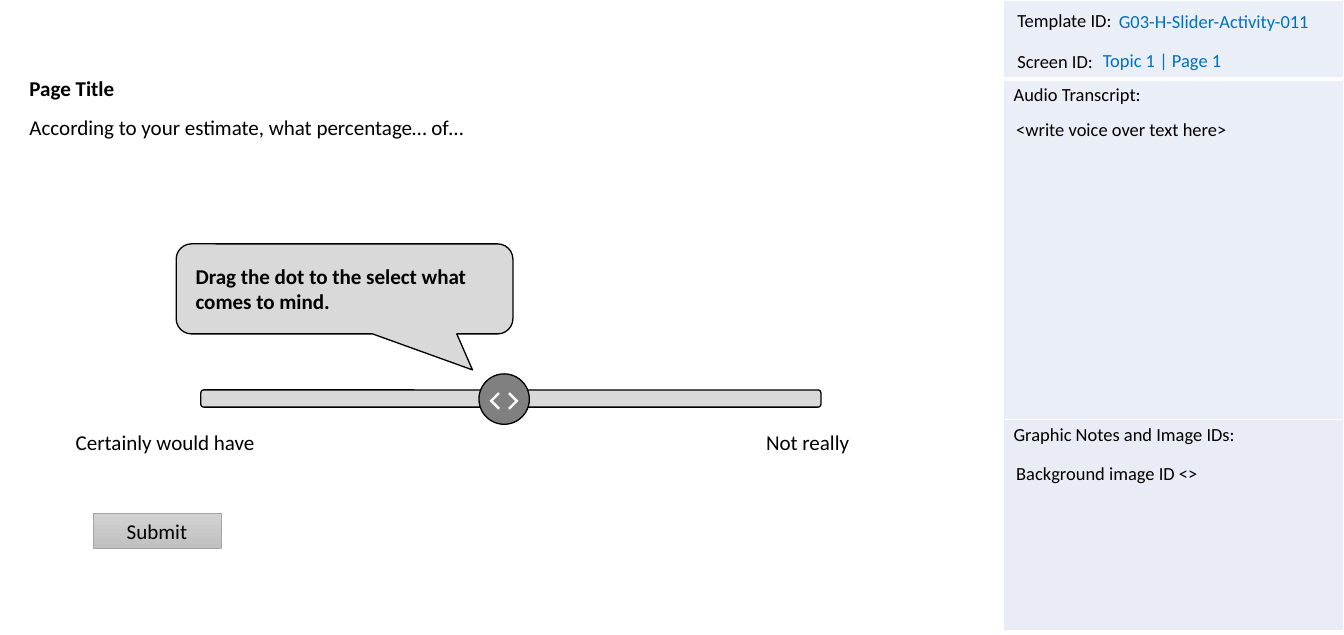
"""Builds a slider activity storyboard slide with a notes panel."""
from dataclasses import dataclass

from lxml import etree
from pptx import Presentation
from pptx import util as u
from pptx.dml.color import RGBColor
from pptx.enum import shapes, text
from pptx.oxml.ns import qn

COLORS = {
    "ink": "000000", "white": "FFFFFF", "link": "0070C0",
    "panel": "EAEFF7", "panel_last": "E9EBF5",
    "light_grey": "D9D9D9", "knob": "808080",
    "button_top": "D2D2D2", "button_bottom": "C0C0C0", "button_edge": "A5A5A5",
}
FONT = "Calibri"
SHAPE = shapes.MSO_SHAPE
SLIDE_SIZE = (36, 17)
PANEL_LEFT, PANEL_WIDTH = 26.87, 9.12
NOTE_INSETS = (0.25, 0.13, 0.25, 0.13)
NO_INSETS = (0, 0, 0, 0)


@dataclass(frozen=True)
class Label:
    wording: str
    left: float
    top: float
    width: float
    height: float = 0.86
    size: int = 14
    color: str = "ink"
    bold: bool = False
    insets: tuple[float, ...] = NOTE_INSETS


@dataclass(frozen=True)
class Figure:
    kind: SHAPE
    left: float
    top: float
    width: float
    height: float
    fill: str
    line: str | None = "ink"
    line_width: float = 1
    rotation: float = 0
    adjustments: tuple[float, ...] = ()


@dataclass(frozen=True)
class PanelRow:
    heading: str
    height: float
    fill: str
    top_border: int
    bottom_border: int


PANEL_ROWS = [
    PanelRow("", 2.11, "panel", 1, 3),
    PanelRow("Audio Transcript:", 9.12, "panel", 3, 1),
    PanelRow("Graphic Notes and Image IDs:", 5.66, "panel_last", 1, 1),
]
LABELS = [
    Label("Screen ID:", 27, 1.22, 4),
    Label("Template ID:", 27, 0.1, 4),
    Label("G03-H-Slider-Activity-011", 29.72, 0.13, 6.27, color="link"),
    Label("Topic 1 | Page 1", 29.29, 1.19, 3.91, color="link"),
    Label("<write voice over text here>", 26.97, 3.02, 9.02),
    Label("Background image ID <>", 26.97, 12.24, 9.02),
    Label("Page Title", 0.79, 2.01, 3.91, 0.97, 16, bold=True, insets=NO_INSETS),
    Label("According to your estimate, what percentage… of…",
          0.79, 3.07, 23.22, 1.4, 16, insets=NO_INSETS),
    Label("Certainly would have", 2.03, 11.51, 5.36, 1.4, 16, insets=NO_INSETS),
    Label("Not really", 20.52, 11.51, 5.36, 1.4, 16, insets=NO_INSETS),
]
CALLOUT = Figure(SHAPE.ROUNDED_RECTANGULAR_CALLOUT, 4.72, 6.53, 9.02, 2.41,
                 "light_grey", adjustments=(0.38, 0.9, 0.17))
BUTTON = Figure(SHAPE.RECTANGLE, 2.49, 13.74, 3.43, 0.94,
                "button_top", "button_edge", 0.5)
SLIDER = [
    Figure(SHAPE.FLOWCHART_ALTERNATE_PROCESS, 5.38, 10.44, 16.61, 0.46, "light_grey"),
    Figure(SHAPE.OVAL, 12.83, 10.01, 1.35, 1.35, "knob"),
    *(Figure(SHAPE.CORNER, left, 10.57, 0.33, 0.33, "white", None,
             rotation=angle, adjustments=(0.2, 0.19))
      for left, angle in ((13.18, 45), (13.49, 225))),
]


def rgb(name: str) -> RGBColor:
    return RGBColor.from_string(COLORS[name])


def write(frame, wording: str, size: int, color: str = "ink", bold: bool = False,
          align=text.PP_ALIGN.LEFT) -> None:
    para = frame.paragraphs[0]
    para.alignment = align
    span = para.add_run()
    span.text = wording
    span.font.name = FONT
    span.font.size = u.Pt(size)
    span.font.bold = bold
    span.font.color.rgb = rgb(color)


def set_insets(holder, insets: tuple[float, ...]) -> None:
    for side, inset in zip(("left", "top", "right", "bottom"), insets):
        setattr(holder, f"margin_{side}", u.Cm(inset))


def set_borders(cell, widths: dict[str, int]) -> None:
    properties = cell._tc.get_or_add_tcPr()
    for side, width in widths.items():
        line = etree.SubElement(properties, qn(f"a:ln{side}"), w=str(int(u.Pt(width))))
        fill = etree.SubElement(line, qn("a:solidFill"))
        etree.SubElement(fill, qn("a:srgbClr"), val=COLORS["white"])


def draw_panel(page) -> None:
    height = sum(row.height for row in PANEL_ROWS)
    table = page.shapes.add_table(len(PANEL_ROWS), 1, u.Cm(PANEL_LEFT), u.Cm(0),
                                  u.Cm(PANEL_WIDTH), u.Cm(height)).table
    table.first_row = table.horz_banding = False
    for index, row in enumerate(PANEL_ROWS):
        table.rows[index].height = u.Cm(row.height)
        cell = table.cell(index, 0)
        set_borders(cell, {"L": 1, "R": 1, "T": row.top_border, "B": row.bottom_border})
        cell.fill.solid()
        cell.fill.fore_color.rgb = rgb(row.fill)
        set_insets(cell, (0.28, 0.13, 0.28, 0.13))
        if row.heading:
            write(cell.text_frame, row.heading, 14)


def draw_label(page, label: Label) -> None:
    box = page.shapes.add_textbox(u.Cm(label.left), u.Cm(label.top),
                                  u.Cm(label.width), u.Cm(label.height))
    box.text_frame.word_wrap = True
    set_insets(box.text_frame, label.insets)
    write(box.text_frame, label.wording, label.size, label.color, label.bold)


def draw_figure(page, figure: Figure):
    shape = page.shapes.add_shape(figure.kind, u.Cm(figure.left), u.Cm(figure.top),
                                  u.Cm(figure.width), u.Cm(figure.height))
    shape.shadow.inherit = False
    shape.rotation = figure.rotation
    for index, value in enumerate(figure.adjustments):
        shape.adjustments[index] = value
    shape.fill.solid()
    shape.fill.fore_color.rgb = rgb(figure.fill)
    if figure.line:
        shape.line.color.rgb = rgb(figure.line)
        shape.line.width = u.Pt(figure.line_width)
    else:
        shape.line.fill.background()
    return shape


def draw_callout(page) -> None:
    frame = draw_figure(page, CALLOUT).text_frame
    frame.word_wrap = True
    frame.vertical_anchor = text.MSO_ANCHOR.TOP
    set_insets(frame, (0.4, 0.4, 0.8, 0.4))
    write(frame, "Drag the dot to the select what comes to mind.", 16, bold=True)


def draw_button(page) -> None:
    button = draw_figure(page, BUTTON)
    button.fill.gradient()
    button.fill.gradient_angle = 270
    for stop, color in zip(button.fill.gradient_stops, ("button_top", "button_bottom")):
        stop.color.rgb = rgb(color)
    frame = button.text_frame
    frame.vertical_anchor = text.MSO_ANCHOR.MIDDLE
    set_insets(frame, (0, 0.13, 0, 0.13))
    write(frame, "Submit", 16, align=text.PP_ALIGN.CENTER)


def main() -> None:
    deck = Presentation()
    deck.slide_width, deck.slide_height = map(u.Cm, SLIDE_SIZE)
    page = deck.slides.add_slide(deck.slide_layouts[6])
    draw_panel(page)
    for label in LABELS:
        draw_label(page, label)
    draw_callout(page)
    for figure in SLIDER:
        draw_figure(page, figure)
    draw_button(page)
    deck.save("out.pptx")


if __name__ == "__main__":
    main()
